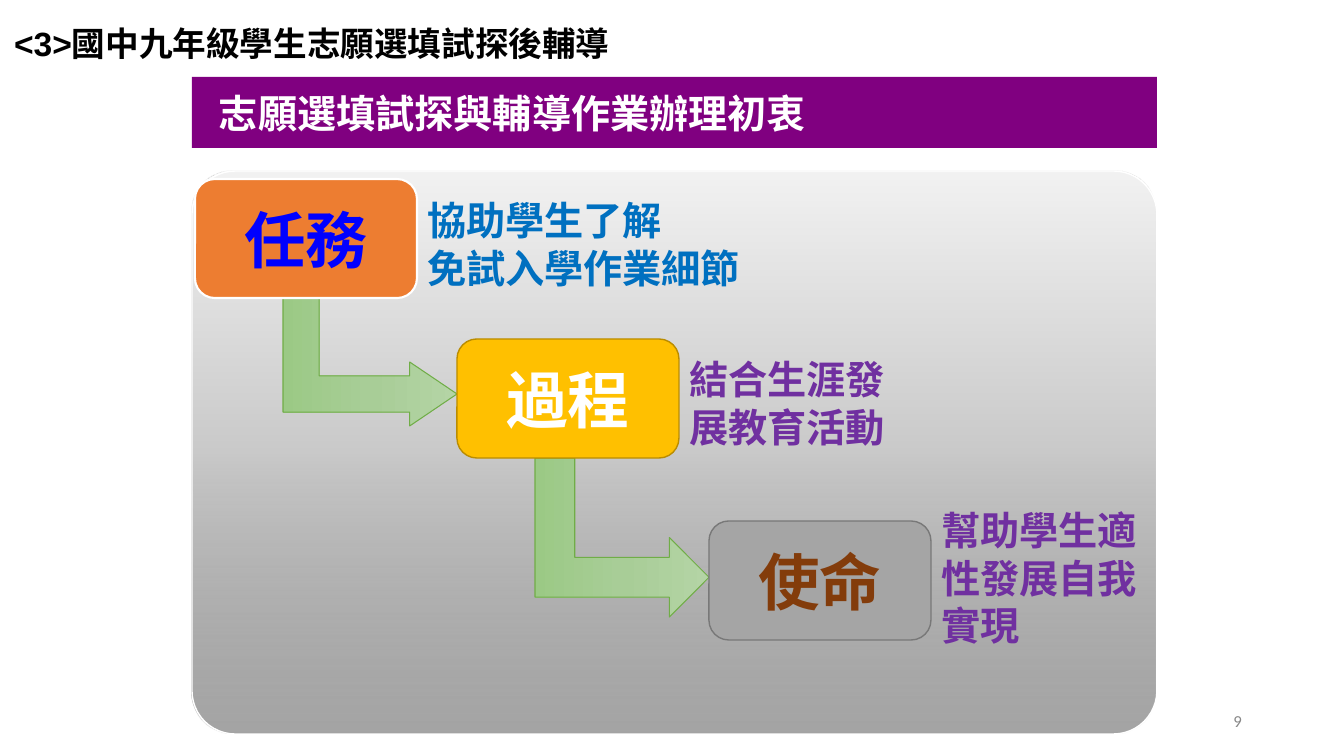
from lxml.etree import SubElement
from pptx import Presentation
from pptx.dml.color import RGBColor
from pptx.enum.shapes import MSO_SHAPE
from pptx.enum.text import MSO_ANCHOR, MSO_AUTO_SIZE, PP_ALIGN
from pptx.oxml import parse_xml
from pptx.oxml.ns import nsdecls, qn
from pptx.util import Emu, Pt

HEADING = "<3>國中九年級學生志願選填試探後輔導"
BANNER = "志願選填試探與輔導作業辦理初衷"
PAGE_NUMBER = "9"
CJK_FONT = "Noto Sans CJK TC"

STEPS = [
    dict(name="任務", corner=(195, 179), fill="ED7D31", border=("FFFFFF", 1.5), color="0000FF",
         caption=["協助學生了解", "免試入學作業細節"], caption_color="0070C0",
         caption_top=187, caption_size=(350, 105), drop=128, bends=(0.283, 0.25, 0.37)),
    dict(name="過程", corner=(457, 339), fill="FFC000", border=("BA8C00", 1), color="FFFFFF",
         caption=["結合生涯發", "展教育活動"], caption_color="7030A0",
         caption_top=346, caption_size=(238, 105), drop=159, bends=(0.25, 0.25, 0.25)),
    dict(name="使命", corner=(709, 521), fill="A5A5A5", border=("787878", 1), color="833C0B",
         caption=["幫助學生適性發展自我實現"], caption_color="7030A0",
         caption_top=497, caption_size=(238, 152)),
]
STEP_WIDTH, STEP_HEIGHT = 222, 119
ARROW_REACH = 174
PANEL_STOPS = [(0, "7B7B7B", 68), (50, "C9C9C9", 100), (100, "F2F2F2", 100)]
ARROW_STOPS = [(0, "B4D4A5", 100), (50, "A8CD97", 100), (100, "9BC985", 100)]


def px(length):
    return Emu(round(length * 914400 / 100.8))


def rgb(color):
    return RGBColor.from_string(color)


def add_block(preset, box, fill=None, border=None, adjustments=()):
    block = slide.shapes.add_shape(preset, *map(px, box))
    block.shadow.inherit = False
    for index, value in enumerate(adjustments):
        block.adjustments[index] = value
    if fill:
        block.fill.solid()
        block.fill.fore_color.rgb = rgb(fill)
    if border:
        block.line.color.rgb = rgb(border[0])
        block.line.width = Pt(border[1])
    else:
        block.line.fill.background()
    return block


def shade(block, stops, angle):
    stop_xml = "".join(
        f'<a:gs pos="{position * 1000}"><a:srgbClr val="{color}">'
        f'<a:alpha val="{opacity * 1000}"/></a:srgbClr></a:gs>'
        for position, color, opacity in stops)
    gradient = parse_xml(
        f'<a:gradFill {nsdecls("a")} rotWithShape="1"><a:gsLst>{stop_xml}</a:gsLst>'
        f'<a:lin ang="{angle * 60000}" scaled="0"/></a:gradFill>')
    block.element.spPr.find(qn("a:prstGeom")).addnext(gradient)


def write(holder, lines, size, color, align=PP_ALIGN.LEFT, anchor=MSO_ANCHOR.MIDDLE,
          latin=CJK_FONT, bold=True, spacing=None, left=10, top=5):
    frame = holder.text_frame
    frame.word_wrap = True
    frame.auto_size = MSO_AUTO_SIZE.NONE
    frame.vertical_anchor = anchor
    frame.margin_left, frame.margin_right = px(left), px(10)
    frame.margin_top, frame.margin_bottom = px(top), px(5)
    frame.text = "\n".join(lines)
    for paragraph in frame.paragraphs:
        paragraph.alignment = align
        if spacing:
            paragraph.line_spacing = Pt(spacing)
        for run in paragraph.runs:
            run.font.size = Pt(size)
            run.font.bold = bold
            run.font.color.rgb = rgb(color)
            run.font.name = latin
            SubElement(run.font._element, qn("a:ea"), typeface=CJK_FONT)


def add_arrow(step, following):
    drop = step["drop"]
    center_x = following["corner"][0] - ARROW_REACH / 2
    center_y = step["corner"][1] + STEP_HEIGHT + drop / 2
    box = (center_x - drop / 2, center_y - ARROW_REACH / 2, drop, ARROW_REACH)
    arrow = add_block(MSO_SHAPE.BENT_UP_ARROW, box, border=("70AD47", 0.75),
                      adjustments=step["bends"])
    arrow.rotation = 90
    shade(arrow, ARROW_STOPS, 90)


def add_step(step):
    left, top = step["corner"]
    block = add_block(MSO_SHAPE.ROUNDED_RECTANGLE, (left, top, STEP_WIDTH, STEP_HEIGHT),
                      step["fill"], step["border"], (0.167,))
    write(block, [step["name"]], 44, step["color"], PP_ALIGN.CENTER)
    caption = slide.shapes.add_textbox(
        *map(px, (left + STEP_WIDTH, step["caption_top"], *step["caption_size"])))
    write(caption, step["caption"], 28, step["caption_color"],
          anchor=MSO_ANCHOR.TOP, spacing=34, top=9)


presentation = Presentation()
presentation.slide_width, presentation.slide_height = px(1344), px(756)
slide = presentation.slides.add_slide(presentation.slide_layouts[5])

heading = slide.shapes.title
heading.left, heading.top, heading.width, heading.height = map(px, (4, 13, 672, 50))
write(heading, [HEADING], 24, "000000", anchor=MSO_ANCHOR.TOP, latin="Arial", spacing=32)

panel = add_block(MSO_SHAPE.ROUNDED_RECTANGLE, (192, 171, 965, 563),
                  border=("FFFFFF", 1), adjustments=(0.077,))
shade(panel, PANEL_STOPS, 270)

banner = add_block(MSO_SHAPE.RECTANGLE, (192, 77, 965, 71), "800080")
write(banner, [BANNER], 28, "FFFFFF", PP_ALIGN.JUSTIFY, left=27)

for step, following in zip(STEPS, STEPS[1:]):
    add_arrow(step, following)
for step in STEPS:
    add_step(step)

page_number = slide.shapes.add_textbox(*map(px, (950, 701, 302, 40)))
write(page_number, [PAGE_NUMBER], 12, "888888", PP_ALIGN.RIGHT, latin="Calibri", bold=False)

presentation.save("out.pptx")
